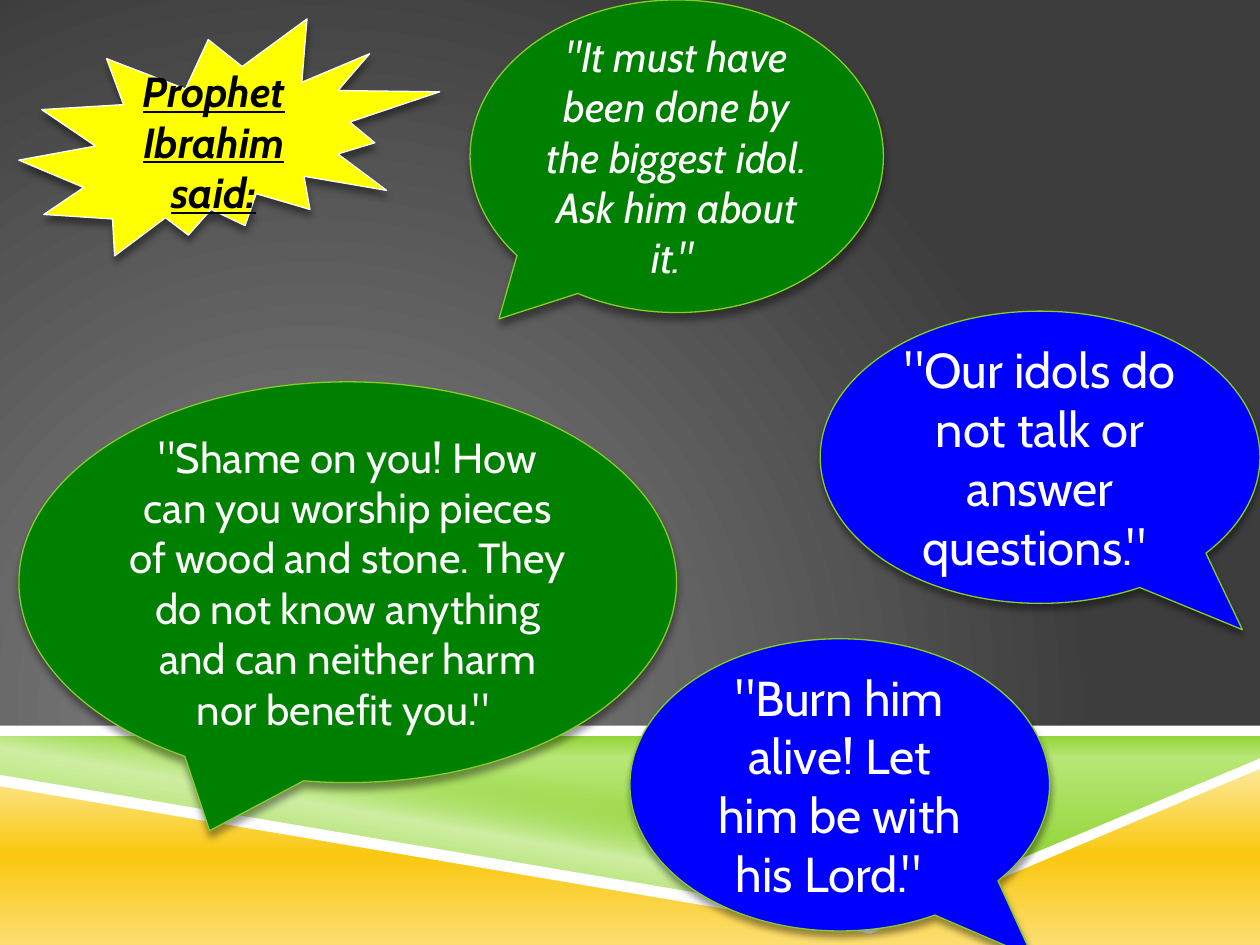
from collections import namedtuple
from dataclasses import dataclass

from lxml import etree
from pptx import Presentation
from pptx.dml.color import RGBColor
from pptx.enum.shapes import MSO_SHAPE
from pptx.enum.text import MSO_ANCHOR, PP_ALIGN
from pptx.oxml.ns import qn
from pptx.util import Pt

BURST = MSO_SHAPE.EXPLOSION2
CALLOUT = MSO_SHAPE.OVAL_CALLOUT
RECTANGLE = MSO_SHAPE.RECTANGLE
MIDDLE = MSO_ANCHOR.MIDDLE
CENTER = PP_ALIGN.CENTER

Box = namedtuple("Box", "left top width height")


@dataclass(frozen=True)
class Theme:
    font: str = "Cabin"
    normal: int = 24
    large: int = 28
    outline: float = 0.75
    white: str = "FFFFFF"
    black: str = "000000"
    yellow: str = "FFFF00"
    blue: str = "0000FF"
    green: str = "008000"
    lime: str = "86CE24"
    backdrop: tuple = ((0, "878787", 100), (100, "3D3D3D", 100))
    meadow: tuple = ((0, "86CE24", 100), (14, "B7E776", 100), (83, "86CE24", 100))
    sheen: tuple = ((41, "86CE24", 0), (57, "CFEFA4", 100), (100, "86CE24", 0))
    gold: tuple = ((0, "FDE99F", 100), (50, "FAC810", 100), (100, "FCDE70", 100))


THEME = Theme()


def add_child(parent, tag, **attributes):
    return etree.SubElement(
        parent, qn(tag), {name: str(value) for name, value in attributes.items()}
    )


def add_color(parent, color, opacity):
    swatch = add_child(parent, "a:srgbClr", val=color)
    if opacity < 100:
        add_child(swatch, "a:alpha", val=opacity * 1000)


def fill_gradient(owner, fill, stops, angle=None, center=None):
    fill.gradient()
    gradient = next(owner.iter(qn("a:gradFill")))
    for child in list(gradient):
        gradient.remove(child)
    stop_list = add_child(gradient, "a:gsLst")
    for position, color, opacity in stops:
        add_color(add_child(stop_list, "a:gs", pos=position * 1000), color, opacity)
    if center:
        circle = add_child(gradient, "a:path", path="circle")
        edges = {side: share * 1000 for side, share in zip("ltrb", center)}
        add_child(circle, "a:fillToRect", **edges)
    else:
        add_child(gradient, "a:lin", ang=angle * 60000, scaled=0)


def fill_solid(shape, color):
    shape.fill.solid()
    shape.fill.fore_color.rgb = RGBColor.from_string(color)


def add_shadow(shape):
    shape.shadow.inherit = False
    effects = shape.element.spPr.find(qn("a:effectLst"))
    shadow = add_child(
        effects, "a:outerShdw", blurRad=Pt(4), dist=Pt(3.3), dir=90 * 60000, rotWithShape=0
    )
    add_color(shadow, THEME.black, 40)


def add_outline(page, box, points):
    (first_x, first_y), *rest = [
        (Pt(box.left + x), Pt(box.top + y)) for x, y in points
    ]
    builder = page.shapes.build_freeform(first_x, first_y)
    builder.add_line_segments(rest, close=True)
    shape = builder.convert_to_shape()
    shape.line.fill.background()
    shape.shadow.inherit = False
    return shape


def add_landscape(page, box):
    right, bottom = box.width, box.height
    meadow = [(0, 0.7), (right, 0), (right, 20), (496, 113.7), (0, 28.8)]
    field = [(0, 30.2), (498, 114.5), (right, 20), (right, bottom), (0, bottom)]
    path = [(0, 25.9), (497, 110), (right, 16.5), (right, 22.4), (497.5, 116.6), (0, 32.4)]

    for points, stops, angle in (
        (meadow, THEME.meadow, 90),
        (meadow, THEME.sheen, 100),
        (field, THEME.gold, 90),
    ):
        shape = add_outline(page, box, points)
        fill_gradient(shape.element.spPr, shape.fill, stops, angle)

    horizon = page.shapes.add_shape(
        RECTANGLE, Pt(box.left), Pt(box.top - 2.2), Pt(right), Pt(5.8)
    )
    horizon.line.fill.background()
    horizon.shadow.inherit = False
    fill_solid(horizon, THEME.white)
    fill_solid(add_outline(page, box, path), THEME.white)


def add_words(page, kind, box, text, size, fill, line, ink):
    shape = page.shapes.add_shape(kind, *(Pt(length) for length in box))
    fill_solid(shape, fill)
    shape.line.color.rgb = RGBColor.from_string(line)
    shape.line.width = Pt(THEME.outline)
    add_shadow(shape)
    frame = shape.text_frame
    frame.word_wrap = True
    frame.vertical_anchor = MIDDLE
    frame.text = text
    para = frame.paragraphs[0]
    para.alignment = CENTER
    span = para.runs[0]
    span.font.name = THEME.font
    span.font.size = Pt(size)
    span.font.color.rgb = RGBColor.from_string(ink)
    return shape, span


def add_title(page, box, text):
    _, span = add_words(
        page, BURST, box, text, THEME.normal, THEME.yellow, THEME.white, THEME.black
    )
    span.font.bold = span.font.italic = span.font.underline = True


def add_speech(page, box, text, size, fill, tail, italic=False):
    shape, span = add_words(
        page, CALLOUT, box, text, size, fill, THEME.lime, THEME.white
    )
    shape.adjustments[0], shape.adjustments[1] = tail
    span.font.italic = italic


def main():
    deck = Presentation()
    deck.slide_width, deck.slide_height = Pt(720), Pt(540)
    page = deck.slides.add_slide(deck.slide_layouts[6])
    fill_gradient(
        page.element, page.background.fill, THEME.backdrop, center=(50, 100, 100, 50)
    )
    add_landscape(page, Box(0, 416.9, 720, 123.1))
    add_title(page, Box(10.8, 10.8, 240.5, 135.4), "Prophet Ibrahim said:")

    crowd_tail = (0.46, 0.59)
    add_speech(
        page, Box(468.7, 177.8, 251.3, 167),
        '"Our idols do not talk or answer questions." ',
        THEME.large, THEME.blue, crowd_tail,
    )
    add_speech(
        page, Box(10.8, 218.2, 375.8, 229),
        '"Shame on you! How can you worship pieces of wood and stone. '
        'They do not know anything and can neither harm nor benefit you." ',
        THEME.normal, THEME.green, (-0.21, 0.62),
    )
    add_speech(
        page, Box(268.6, 0, 236.2, 178.6),
        '"It must have been done by the biggest idol. Ask him about it." ',
        THEME.normal, THEME.green, (-0.43, 0.52), italic=True,
    )
    add_speech(
        page, Box(360, 365, 239.8, 167),
        '"Burn him alive! Let him be with his Lord."  ',
        THEME.large, THEME.blue, crowd_tail,
    )
    deck.save("out.pptx")


if __name__ == "__main__":
    main()
